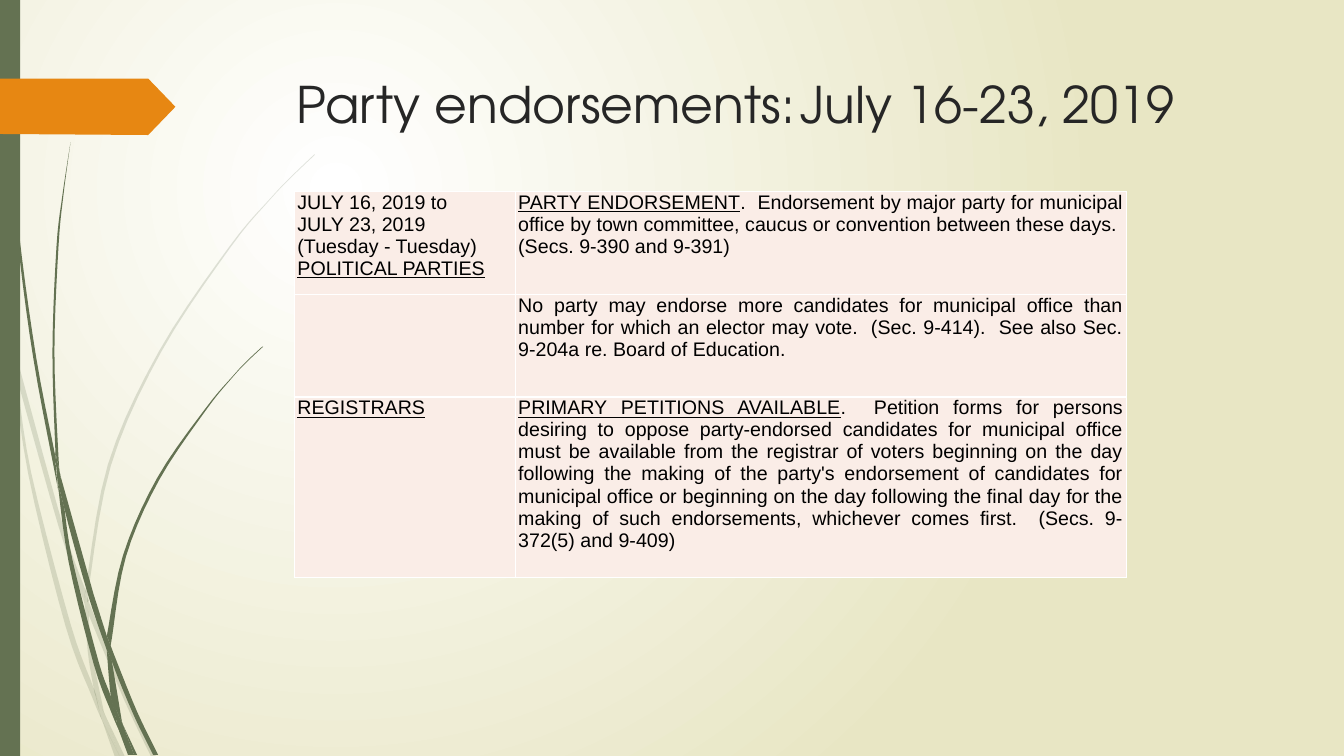
"""Build a slide with a table of the dates for party endorsements."""
import pptx
import pptx.dml.color
import pptx.enum.text
import pptx.oxml
import pptx.oxml.ns
import pptx.util

Inches = pptx.util.Inches
COLORS = {
    "grass": "647252", "arrow": "E78712", "title": "262626", "text": "000000",
    "cell": "FAEDE7", "border": "FFFFFF", "light": "FFFFFF", "sand": "E8E6C4",
}
FONTS = {"title": "TeX Gyre Adventor", "table": "Arial"}

PALE_BLADES = [
    [[(0.11, 3.5), (0.09, 3.22), (0, 2.82)], [(0, 2.99), (0.1, 3.44)]],
    [[(0.14, 3.45), (0.62, 5.2), (0.85, 5.86)], [(0.84, 5.99), (0.58, 5.22), (0.17, 3.76)]],
    [[(0.88, 5.96), (0.92, 6.07), (1.27, 6.92), (1.55, 7.51)],
     [(1.5, 7.51), (1.23, 6.94), (0.88, 6.1)]],
    [[(1.19, 7.51), (1.24, 7.51)], [(1.05, 7.11)]],
    [[(0.11, 3.5), (0.28, 4.7), (0.65, 6.21), (0.92, 6.93), (1.01, 7.14)],
     [(0.99, 7.07), (0.93, 6.83), (0.7, 6.19), (0.31, 4.69), (0.17, 3.76)]],
    [[(0.84, 5.99), (0.87, 6.46), (0.93, 6.83), (0.96, 6.92), (1.05, 7.11)],
     [(1.03, 7.06), (0.91, 6.46), (0.88, 6.1), (0.88, 6.08)]],
    [[(0.88, 5.96), (0.88, 5.84), (1.1, 4.62), (1.6, 3.49), (2.29, 2.45),
      (2.68, 1.98), (2.9, 1.75), (3.12, 1.54)],
     [(3.12, 1.53), (2.89, 1.75), (2.68, 1.97), (2.28, 2.44), (1.58, 3.48),
      (1.07, 4.61), (0.85, 5.84), (0.85, 5.86)]],
    [[(1.01, 7.14), (1.14, 7.51)], [(1.19, 7.51)]],
    [[(0.88, 6.08), (0.88, 6.1), (0.88, 5.96)], [(0.85, 5.86), (0.84, 5.99)]],
    [[(0.96, 6.92), (0.93, 6.83), (0.99, 7.07), (1.01, 7.14), (1.19, 7.51)], [(1.05, 7.11)]],
]
DARK_BLADES = [
    [[(0.03, 0), (0.04, 0.48), (0.07, 1.1), (0.17, 2.33), (0.33, 3.55), (0.56, 4.77), (0.57, 4.81)],
     [(0.55, 4.57), (0.55, 4.53), (0.36, 3.55), (0.19, 2.32), (0.08, 1.09), (0.05, 0.48), (0.04, 0)]],
    [[(0.6, 4.72), (0.64, 5.05), (0.88, 5.92), (1.06, 6.45)], [(1.06, 6.31), (0.93, 5.9)]],
    [[(1.1, 6.41), (1.11, 6.56), (1.32, 7.08), (1.52, 7.49)],
     [(1.57, 7.49), (1.36, 7.06), (1.13, 6.49)]],
    [[(0.57, 4.77), (0.68, 5.57), (0.93, 6.59), (1.11, 7.08), (1.17, 7.22)],
     [(1.16, 7.17), (1.1, 6.91), (0.98, 6.57), (0.72, 5.56), (0.64, 5.05)]],
    [[(0.6, 4.72), (0.58, 4.53), (0.54, 3.49), (0.58, 2.45), (0.63, 1.93), (0.7, 1.41)],
     [(0.7, 1.41), (0.62, 1.93), (0.56, 2.45), (0.52, 3.49), (0.55, 4.49)]],
    [[(1.33, 7.49), (1.36, 7.49)], [(1.22, 7.19)]],
    [[(0.57, 4.77), (0.64, 5.05)], [(0.6, 4.72), (0.55, 4.49), (0.55, 4.53)]],
    [[(1.1, 6.41), (1.11, 6.33), (1.25, 5.52), (1.58, 4.76), (2.05, 4.06),
      (2.31, 3.74), (2.45, 3.59), (2.61, 3.44)],
     [(2.6, 3.44), (2.45, 3.58), (2.31, 3.73), (2.04, 4.05), (1.56, 4.74), (1.22, 5.51), (1.06, 6.31)]],
    [[(1.17, 7.22), (1.27, 7.49)], [(1.31, 7.49)]],
    [[(1.06, 6.45), (1.1, 6.91), (1.16, 7.06), (1.22, 7.19)],
     [(1.21, 7.16), (1.11, 6.56), (1.09, 6.51)]],
    [[(1.06, 6.45), (1.09, 6.51), (1.11, 6.56)], [(1.1, 6.41), (1.06, 6.31)]],
    [[(1.16, 7.06), (1.1, 6.91), (1.16, 7.17), (1.17, 7.22), (1.3, 7.49)],
     [(1.33, 7.49), (1.22, 7.19)]],
]
ARROW = [[(0, 0.78)], [(1.47, 0.78)], [(1.74, 1.06)], [(1.47, 1.34)], [(0, 1.33)]]

COLUMN_WIDTHS = [2.19, 6.06]
ROW_HEIGHTS = [1.02, 1.02, 1.79]
ROWS = [
    ([[("JULY 16, 2019 to", False)], [("JULY 23, 2019", False)],
      [("(Tuesday - Tuesday)", False)], [("POLITICAL PARTIES", True)]],
     [[("PARTY ENDORSEMENT", True),
       (".  Endorsement by major party for municipal office by town committee, caucus or "
        "convention between these days.  (Secs. 9-390 and 9-391)", False)]]),
    ([],
     [[("No party may endorse more candidates for municipal office than number for which an "
        "elector may vote.  (Sec. 9-414).  See also Sec. 9-204a re. Board of Education.", False)]]),
    ([[("REGISTRARS", True)]],
     [[("PRIMARY PETITIONS AVAILABLE", True),
       (".  Petition forms for persons desiring to oppose party-endorsed candidates for municipal "
        "office must be available from the registrar of voters beginning on the day following the "
        "making of the party's endorsement of candidates for municipal office or beginning on the "
        "day following the final day for the making of such endorsements, whichever comes first.  "
        "(Secs. 9-372(5) and 9-409)", False)]]),
]


def rgb(name):
    return pptx.dml.color.RGBColor.from_string(COLORS[name])


def add_text(paragraph, text, *, font, size, color, underline=False, align=None):
    run = paragraph.add_run()
    run.text = text
    run.font.name = font
    run.font.size = pptx.util.Pt(size)
    run.font.color.rgb = rgb(color)
    run.font.underline = underline
    paragraph.alignment = align


def set_background(slide):
    namespaces = pptx.oxml.ns.nsdecls("p", "a")
    background = pptx.oxml.parse_xml(
        f'<p:bg {namespaces}><p:bgPr><a:gradFill rotWithShape="1"><a:gsLst>'
        f'<a:gs pos="0"><a:srgbClr val="{COLORS["light"]}"/></a:gs>'
        f'<a:gs pos="100000"><a:srgbClr val="{COLORS["sand"]}"/></a:gs></a:gsLst>'
        '<a:path path="circle"><a:fillToRect l="50000" t="50000" r="100000" b="100000"/></a:path>'
        '</a:gradFill><a:effectLst/></p:bgPr></p:bg>')
    slide.element.find(pptx.oxml.ns.qn("p:cSld")).insert(0, background)


def paint(shape, color, opacity=100):
    shape.shadow.inherit = False
    shape.line.fill.background()
    shape.fill.solid()
    shape.fill.fore_color.rgb = rgb(color)
    if opacity < 100:
        namespace = pptx.oxml.ns.nsdecls("a")
        alpha = pptx.oxml.parse_xml(f'<a:alpha {namespace} val="{opacity * 1000}"/>')
        next(shape.element.spPr.iter(pptx.oxml.ns.qn("a:srgbClr"))).append(alpha)


def smooth(edge, steps=5):
    """Return points on a Catmull-Rom curve through the points of the edge."""
    padded = [edge[0], *edge, edge[-1]]
    curve = [edge[0]]
    for before, start, end, after in zip(padded, padded[1:], padded[2:], padded[3:]):
        for step in range(1, steps + 1):
            t = step / steps
            curve.append(tuple(
                b + ((c - a) * t + (2 * a - 5 * b + 4 * c - d) * t ** 2
                     + (3 * b - a - 3 * c + d) * t ** 3) / 2
                for a, b, c, d in zip(before, start, end, after)))
    return curve


def add_outline(slide, edges, color, opacity=100):
    points = [(Inches(x), Inches(y)) for edge in edges for x, y in smooth(edge)]
    builder = slide.shapes.build_freeform(*points[0])
    builder.add_line_segments(points[1:], close=True)
    paint(builder.convert_to_shape(), color, opacity)


def add_bar(slide, left, top, width, height, color):
    rectangle = pptx.enum.shapes.MSO_SHAPE.RECTANGLE
    bar = slide.shapes.add_shape(rectangle, Inches(left), Inches(top), Inches(width), Inches(height))
    paint(bar, color)


def set_title(slide, text):
    title = slide.shapes.title
    title.left, title.top, title.width, title.height = map(Inches, (2.84, 0.68, 9.75, 1.4))
    title.text_frame.vertical_anchor = pptx.enum.text.MSO_ANCHOR.TOP
    title.text_frame.auto_size = pptx.enum.text.MSO_AUTO_SIZE.NONE
    add_text(title.text_frame.paragraphs[0], text, font=FONTS["title"], size=36,
             color="title", align=pptx.enum.text.PP_ALIGN.LEFT)


def format_cell(cell, paragraphs):
    cell.margin_left = cell.margin_right = Inches(0.03)
    cell.margin_top = cell.margin_bottom = 0
    for index, runs in enumerate(paragraphs):
        frame = cell.text_frame
        paragraph = frame.add_paragraph() if index else frame.paragraphs[0]
        for text, underline in runs:
            add_text(paragraph, text, font=FONTS["table"], size=14, color="text",
                     underline=underline, align=pptx.enum.text.PP_ALIGN.JUSTIFY)
    properties = cell._tc.get_or_add_tcPr()
    for side in ("lnL", "lnR", "lnT", "lnB"):
        properties.append(pptx.oxml.parse_xml(
            f'<a:{side} {pptx.oxml.ns.nsdecls("a")} w="12700"><a:solidFill>'
            f'<a:srgbClr val="{COLORS["border"]}"/></a:solidFill></a:{side}>'))
    cell.fill.solid()
    cell.fill.fore_color.rgb = rgb("cell")


def add_dates_table(slide):
    table = slide.shapes.add_table(
        len(ROWS), len(COLUMN_WIDTHS), Inches(2.92), Inches(1.9),
        Inches(sum(COLUMN_WIDTHS)), Inches(sum(ROW_HEIGHTS))).table
    table.first_row = table.horz_banding = False
    for column, width in zip(table.columns, COLUMN_WIDTHS):
        column.width = Inches(width)
    for row, height, contents in zip(table.rows, ROW_HEIGHTS, ROWS):
        row.height = Inches(height)
        for cell, paragraphs in zip(row.cells, contents):
            format_cell(cell, paragraphs)


def main():
    presentation = pptx.Presentation()
    presentation.slide_width, presentation.slide_height = Inches(13.33), Inches(7.5)
    slide = presentation.slides.add_slide(presentation.slide_layouts[5])
    set_background(slide)
    for blade in PALE_BLADES:
        add_outline(slide, blade, "grass", opacity=20)
    for blade in DARK_BLADES:
        add_outline(slide, blade, "grass")
    add_bar(slide, 0, 0, 0.2, 7.5, "grass")
    add_outline(slide, ARROW, "arrow")
    set_title(slide, "Party endorsements:\tJuly 16-23, 2019")
    add_dates_table(slide)
    presentation.save("out.pptx")


if __name__ == "__main__":
    main()
